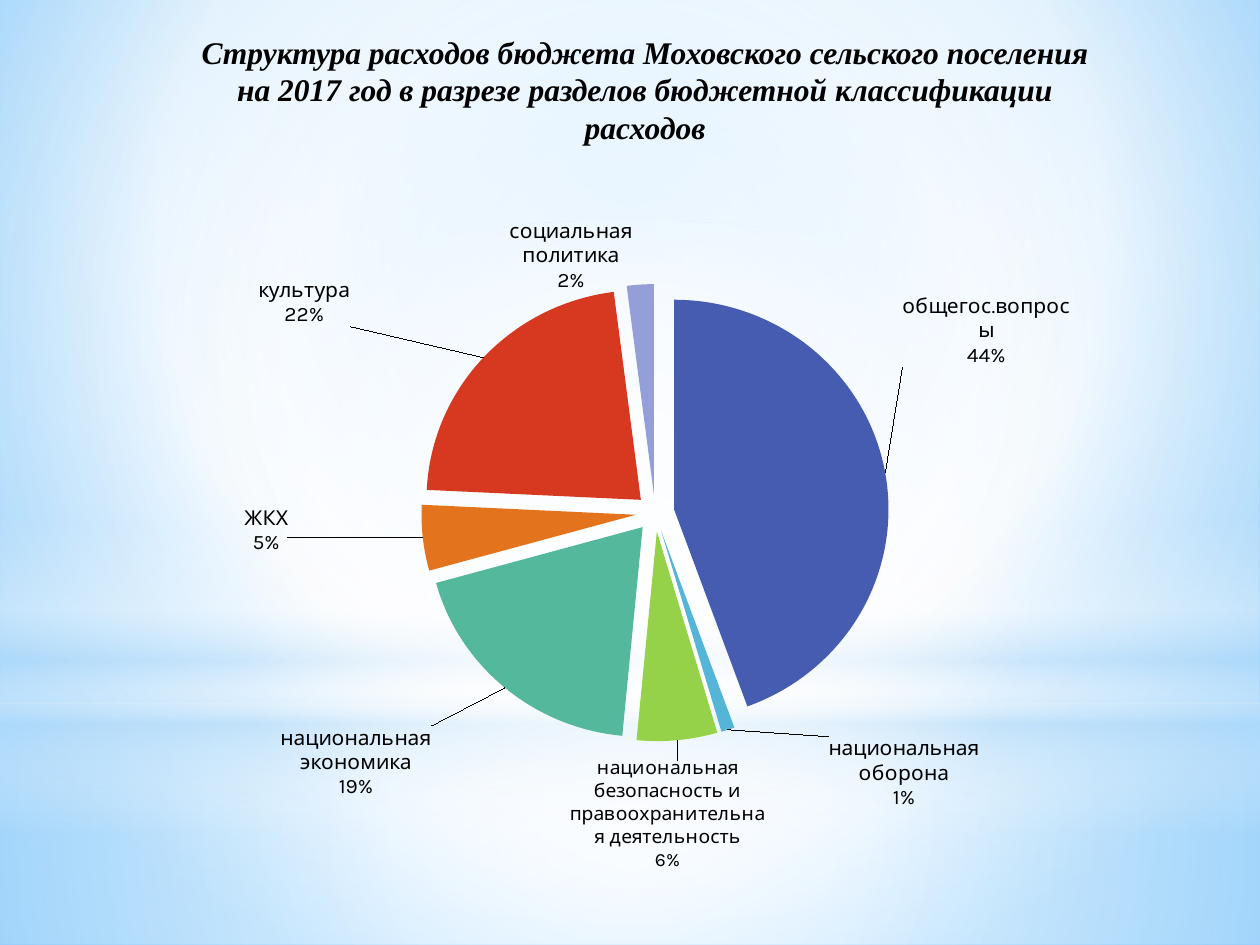
from pptx import Presentation
from pptx import util as u
from pptx.chart.data import CategoryChartData
from pptx.dml.color import RGBColor
from pptx.enum import chart as charts, shapes, text
from pptx.oxml import parse_xml
from pptx.oxml.ns import nsdecls, qn

TITLE = ("Структура расходов бюджета Моховского сельского поселения "
         "на 2017 год в разрезе разделов бюджетной классификации расходов")

# name, percent, colour, label shift x, label shift y, label size
EXPENSES = [
    ("общегос.вопросы", 44, "465CB1", 0.01, -0.16, 12),
    ("национальная оборона", 1, "54B5D8", 0.1, 0, 12),
    ("национальная безопасность и правоохранительная деятельность",
     6, "95D24A", -0.11, 0.02, 11),
    ("национальная экономика", 19, "54B89C", -0.07, 0.05, 12),
    ("ЖКХ", 5, "E3731C", -0.13, -0.05, 12),
    ("культура", 22, "D73820", -0.13, -0.04, 12),
    ("социальная политика", 2, "949ED8", -0.07, 0.02, 12),
    ("спорт", 0, "9EDFF8", 0.06, -0.01, 12),
]

CENTRE = (50, 50, 50, 50)
RECTANGLE = shapes.MSO_SHAPE.RECTANGLE
OVAL = shapes.MSO_SHAPE.OVAL
LAYERS = [
    (RECTANGLE, 5.58, 1.92, CENTRE,
     [(0, "FFFFFF", 91), (37, "FFFFFF", 76), (100, "B4DCFA", 79)]),
    (RECTANGLE, 0, 5.58, CENTRE,
     [(0, "FFFFFF", 89), (48, "FFFFFF", 62), (100, "B4DCFA", 79)]),
    (RECTANGLE, 4.12, 2.5, None,
     [(0, "FFFFFF", 0), (29, "FFFFFF", 30), (45, "B4DCFA", 40),
      (55, "FFFFFF", 26), (65, "B4DCFA", 60), (100, "FFFFFF", 0)]),
    (OVAL, 1.75, 5.58, CENTRE, [(0, "FFFFFF", 100), (56, "FFFFFF", 0)]),
]


def colour(value):
    return RGBColor.from_string(value)


def set_gradient(fill, element, stops, focus):
    fill.solid()
    fill.fore_color.rgb = colour("FFFFFF")
    stop_xml = "".join(
        f'<a:gs pos="{position * 1000}"><a:srgbClr val="{value}">'
        f'<a:alpha val="{opacity * 1000}"/></a:srgbClr></a:gs>'
        for position, value, opacity in stops)
    if focus:
        sides = " ".join(f'{side}="{amount * 1000}"' for side, amount in zip("ltrb", focus))
        direction = f'<a:path path="circle"><a:fillToRect {sides}/></a:path>'
    else:
        direction = '<a:lin ang="5400000" scaled="0"/>'
    solid = next(element.iter(qn("a:solidFill")))
    solid.getparent().replace(solid, parse_xml(
        f'<a:gradFill {nsdecls("a")} rotWithShape="1"><a:gsLst>{stop_xml}</a:gsLst>'
        f'{direction}</a:gradFill>'))


def add_layer(slide, kind, top, height, focus, stops):
    shape = slide.shapes.add_shape(
        kind, u.Inches(0), u.Inches(top), u.Inches(10), u.Inches(height))
    shape.shadow.inherit = False
    set_gradient(shape.fill, shape._element, stops, focus)
    shape.line.fill.background()


def add_title(slide):
    box = slide.shapes.add_textbox(
        u.Inches(1.38), u.Inches(0.21), u.Inches(7.48), u.Inches(1.01))
    frame = box.text_frame
    frame.word_wrap = True
    frame.text = TITLE
    paragraph = frame.paragraphs[0]
    paragraph.alignment = text.PP_ALIGN.CENTER
    font = paragraph.runs[0].font
    font.name, font.size = "Times New Roman", u.Pt(18)
    font.bold = font.italic = True
    font.color.rgb = colour("000000")


def set_plot_layout(chart, x, y, width, height):
    area = next(chart._chartSpace.iter(qn("c:plotArea")))
    for layout in area.findall(qn("c:layout")):
        area.remove(layout)
    area.insert(0, parse_xml(
        f'<c:layout {nsdecls("c")}><c:manualLayout><c:layoutTarget val="inner"/>'
        '<c:xMode val="edge"/><c:yMode val="edge"/>'
        f'<c:x val="{x}"/><c:y val="{y}"/><c:w val="{width}"/><c:h val="{height}"/>'
        '</c:manualLayout></c:layout>'))


def label_xml(index, x, y, size):
    return parse_xml(
        f'<c:dLbl {nsdecls("c", "a")}><c:idx val="{index}"/>'
        f'<c:layout><c:manualLayout><c:x val="{x}"/><c:y val="{y}"/></c:manualLayout></c:layout>'
        '<c:numFmt formatCode="0%" sourceLinked="0"/><c:spPr><a:noFill/></c:spPr>'
        f'<c:txPr><a:bodyPr/><a:p><a:pPr><a:defRPr sz="{size * 100}">'
        '<a:solidFill><a:srgbClr val="000000"/></a:solidFill><a:latin typeface="Karla"/>'
        '</a:defRPr></a:pPr><a:endParaRPr lang="ru-RU"/></a:p></c:txPr>'
        '<c:dLblPos val="outEnd"/><c:showLegendKey val="0"/><c:showVal val="0"/>'
        '<c:showCatName val="1"/><c:showSerName val="0"/><c:showPercent val="1"/>'
        '<c:showBubbleSize val="0"/><c:separator>\n</c:separator></c:dLbl>')


def add_expense_chart(slide):
    data = CategoryChartData()
    data.categories = [expense[0] for expense in EXPENSES]
    data.add_series("Series 1", [expense[1] for expense in EXPENSES])
    chart = slide.shapes.add_chart(
        charts.XL_CHART_TYPE.PIE, u.Inches(0.91), u.Inches(1.62),
        u.Inches(7.8), u.Inches(5.3), data).chart
    chart.has_title = chart.has_legend = False
    chart.font.name, chart.font.size = "Karla", u.Pt(10)
    chart.font.color.rgb = colour("000000")
    set_plot_layout(chart, 0.19, 0.1, 0.72, 0.7)

    plot = chart.plots[0]
    plot.vary_by_categories = True
    series = plot.series[0]
    labels = series.data_labels
    labels.show_category_name = labels.show_percentage = True
    labels.show_value = False
    labels.font.size = u.Pt(12)
    for index, (_, _, fill_colour, x, y, size) in enumerate(EXPENSES):
        point_format = series.points[index].format
        point_format.fill.solid()
        point_format.fill.fore_color.rgb = colour(fill_colour)
        point_format.line.fill.background()
        labels._element.insert(index, label_xml(index, x, y, size))
    first_point = series._element.find(qn("c:dPt"))
    first_point.addprevious(parse_xml(f'<c:explosion {nsdecls("c")} val="9"/>'))


def main():
    presentation = Presentation()
    presentation.slide_width, presentation.slide_height = u.Inches(10), u.Inches(7.5)
    slide = presentation.slides.add_slide(presentation.slide_layouts[6])
    set_gradient(slide.background.fill, slide._element,
                 [(0, "9ED5FF", 100), (60, "FFFFFF", 100), (100, "5BB9FF", 100)],
                 (20, 10, 20, 60))
    for layer in LAYERS:
        add_layer(slide, *layer)
    add_title(slide)
    add_expense_chart(slide)
    presentation.save("out.pptx")


if __name__ == "__main__":
    main()
